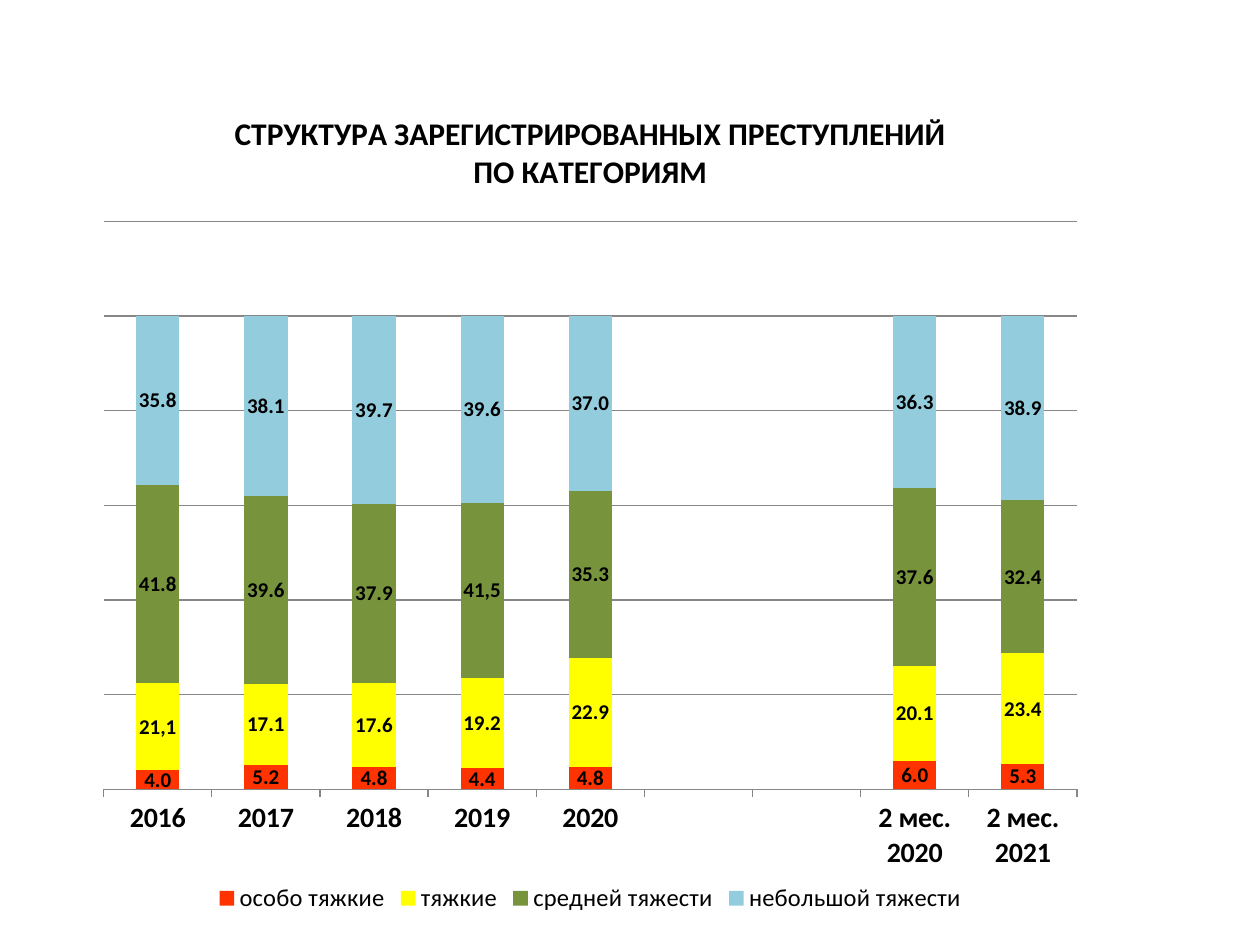
from pptx import Presentation
from pptx.chart.data import CategoryChartData as Data
from pptx.dml.color import RGBColor
from pptx.enum.chart import XL_CHART_TYPE as Kind, XL_LABEL_POSITION as Spot
from pptx.enum.chart import XL_LEGEND_POSITION as Side, XL_TICK_LABEL_POSITION as Tag
from pptx.enum.chart import XL_TICK_MARK as Tick
from pptx.oxml import parse_xml
from pptx.oxml.ns import nsdecls, qn
from pptx.util import Inches, Pt

BLACK = RGBColor(0, 0, 0)
GRAY = RGBColor(0x87, 0x87, 0x87)
RED = RGBColor(0xFF, 0x33, 0x00)
YELLOW = RGBColor(0xFF, 0xFF, 0x00)
GREEN = RGBColor(0x77, 0x93, 0x3C)
BLUE = RGBColor(0x93, 0xCD, 0xDD)

TITLE = ["СТРУКТУРА ЗАРЕГИСТРИРОВАННЫХ ПРЕСТУПЛЕНИЙ", "ПО КАТЕГОРИЯМ"]
YEARS = ["2016", "2017", "2018", "2019", "2020", "", "", "2 мес. 2020", "2 мес. 2021"]
SERIES = [
    ("особо тяжкие", RED, [4, 5.2, 4.8, 4.4, 4.8, None, None, 6, 5.3], {}),
    ("тяжкие", YELLOW, [18.4, 17.1, 17.6, 19.2, 22.9, None, None, 20.1, 23.4], {0: "21,1"}),
    ("средней тяжести", GREEN, [41.8, 39.6, 37.9, 36.8, 35.3, None, None, 37.6, 32.4], {3: "41,5"}),
    ("небольшой тяжести", BLUE, [35.8, 38.1, 39.7, 39.6, 37, None, None, 36.3, 38.9], {}),
]
PLOT = {"x": 0.019, "y": 0.163, "w": 0.962, "h": 0.682}


def apply(item, **values):
    for key, value in values.items():
        setattr(item, key, value)


def style(font, size, bold=False):
    apply(font, name="Calibri", size=Pt(size), bold=bold)
    font.color.rgb = BLACK


def rule(line):
    line.color.rgb = GRAY
    line.width = Pt(0.75)


def add_title(chart):
    frame = chart.chart_title.text_frame
    frame.text = "\n".join(TITLE)
    for para in frame.paragraphs:
        for run in para.runs:
            style(run.font, 18, True)
    chart.chart_title.include_in_layout = False


def set_axes(chart):
    years = chart.category_axis
    apply(years, major_tick_mark=Tick.OUTSIDE, minor_tick_mark=Tick.NONE,
          tick_label_position=Tag.LOW)
    style(years.tick_labels.font, 16, True)
    rule(years.format.line)
    share = chart.value_axis
    apply(share, minimum_scale=0, maximum_scale=120, major_unit=20,
          has_major_gridlines=True, visible=False)
    rule(share.major_gridlines.format.line)


def set_plot(chart):
    area = chart._chartSpace.chart.plotArea
    for old in area.findall(qn("c:layout")):
        area.remove(old)
    modes = "".join(f'<c:{key}Mode val="edge"/>' for key in "xy")
    sizes = "".join(f'<c:{key} val="{value}"/>' for key, value in PLOT.items())
    area.insert(0, parse_xml(
        f'<c:layout {nsdecls("c")}><c:manualLayout><c:layoutTarget val="inner"/>'
        f'{modes}{sizes}</c:manualLayout></c:layout>'))


def set_series(chart):
    plot = chart.plots[0]
    apply(plot, gap_width=150, overlap=100, vary_by_categories=False)
    for series, (_, color, _, notes) in zip(plot.series, SERIES):
        fill = series.format.fill
        fill.solid()
        fill.fore_color.rgb = color
        labels = series.data_labels
        apply(labels, show_value=True, position=Spot.CENTER,
              number_format="0.0", number_format_is_linked=False)
        style(labels.font, 12, True)
        for index, text in notes.items():
            label = series.points[index].data_label
            label.text_frame.text = text
            style(label.text_frame.paragraphs[0].runs[0].font, 12, True)
            label.position = Spot.CENTER


def add_crimes(slide, box):
    data = Data(number_format="0.0")
    data.categories = YEARS
    for name, _, values, _ in SERIES:
        data.add_series(name, values)
    chart = slide.shapes.add_chart(Kind.COLUMN_STACKED, *box, data).chart
    style(chart.font, 18)
    add_title(chart)
    set_axes(chart)
    set_plot(chart)
    set_series(chart)
    chart.has_legend = True
    apply(chart.legend, position=Side.BOTTOM, include_in_layout=False)
    style(chart.legend.font, 14)


def main():
    deck = Presentation()
    apply(deck, slide_width=Inches(10), slide_height=Inches(7.5))
    slide = deck.slides.add_slide(deck.slide_layouts[6])
    add_crimes(slide, [Inches(n) for n in (0.67, 0.68, 8.03, 6.61)])
    deck.save("out.pptx")


if __name__ == "__main__":
    main()
